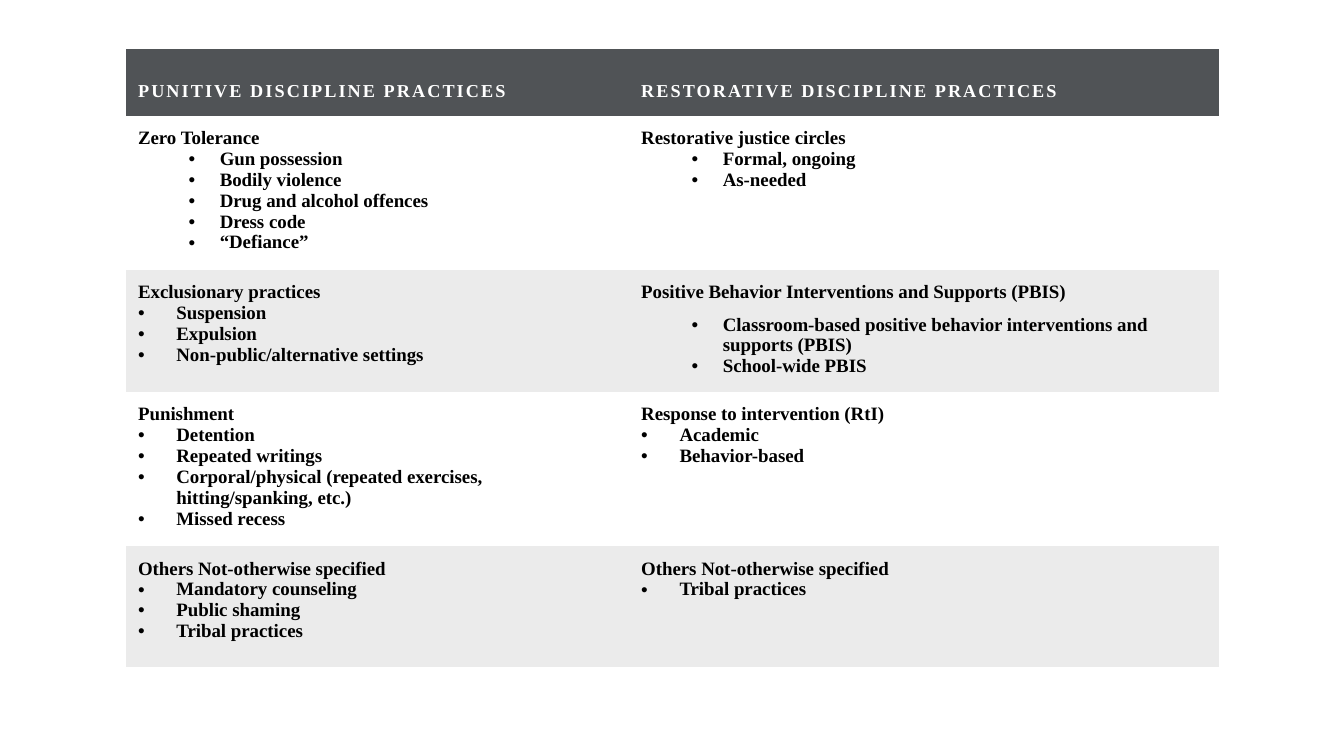
from lxml.etree import SubElement
from pptx import Presentation
from pptx.dml.color import RGBColor
from pptx.oxml.ns import qn
from pptx.util import Inches, Pt

SLIDE_WIDTH, SLIDE_HEIGHT = 13.33, 7.5
FONT = "Times New Roman"
HEADER_FILL, BAND_FILL = "505356", "EBEBEB"
WHITE, BLACK = "FFFFFF", "000000"
NO_GRID_STYLE = "{2D5ABB26-0587-4C30-8999-92F81FD0307C}"
COLUMN_WIDTHS = [4.99, 5.85]
ROW_HEIGHTS = [0.66, 1.53, 1.21, 1.53, 1.2]
CELL_MARGIN = 0.12
SHALLOW, DEEP = (0, 0.38, 0.38), (1, 0.81, 0.31)

HEADINGS = ["PUNITIVE DISCIPLINE PRACTICES", "RESTORATIVE DISCIPLINE PRACTICES"]
PRACTICES = [
    [
        ("Zero Tolerance", DEEP, 0,
         ["Gun possession", "Bodily violence", "Drug and alcohol offences",
          "Dress code", "“Defiance”"]),
        ("Restorative justice circles", DEEP, 0, ["Formal, ongoing", "As-needed"]),
    ],
    [
        ("Exclusionary practices", SHALLOW, 0,
         ["Suspension", "Expulsion", "Non-public/alternative settings"]),
        ("Positive Behavior Interventions and Supports (PBIS)", DEEP, 8,
         ["Classroom-based positive behavior interventions and supports (PBIS)",
          "School-wide PBIS"]),
    ],
    [
        ("Punishment", SHALLOW, 0,
         ["Detention", "Repeated writings",
          "Corporal/physical (repeated exercises, hitting/spanking, etc.)",
          "Missed recess"]),
        ("Response to intervention (RtI)", SHALLOW, 0, ["Academic", "Behavior-based"]),
    ],
    [
        ("Others Not-otherwise specified", SHALLOW, 0,
         ["Mandatory counseling", "Public shaming", "Tribal practices"]),
        ("Others Not-otherwise specified", SHALLOW, 0, ["Tribal practices"]),
    ],
]


def color(hex_code):
    return RGBColor.from_string(hex_code)


def add_text(paragraph, text, size, hex_code):
    run = paragraph.add_run()
    run.text = text
    run.font.name = FONT
    run.font.size = Pt(size)
    run.font.bold = True
    run.font.color.rgb = color(hex_code)
    return run


def add_bullet(paragraph, indent):
    level, left, hanging = indent
    paragraph.level = level
    properties = paragraph._p.get_or_add_pPr()
    properties.set("marL", str(Inches(left)))
    properties.set("indent", str(-Inches(hanging)))
    SubElement(properties, qn("a:buFont"), typeface="Arial")
    SubElement(properties, qn("a:buChar"), char="•")


def format_cell(cell, fill):
    cell.margin_left = cell.margin_right = Inches(CELL_MARGIN)
    cell.margin_top = cell.margin_bottom = Inches(CELL_MARGIN)
    if fill:
        cell.fill.solid()
        cell.fill.fore_color.rgb = color(fill)
    else:
        cell.fill.background()


def write_heading(cell, heading):
    format_cell(cell, HEADER_FILL)
    paragraph = cell.text_frame.paragraphs[0]
    paragraph.line_spacing = 2.0
    run = add_text(paragraph, heading, 13, WHITE)
    run.font._element.set("spc", "150")


def write_practice(cell, practice, fill):
    title, indent, space_after, examples = practice
    format_cell(cell, fill)
    title_line = cell.text_frame.paragraphs[0]
    title_line.space_after = Pt(space_after)
    add_text(title_line, title, 13.5, BLACK)
    for example in examples:
        example_line = cell.text_frame.add_paragraph()
        add_bullet(example_line, indent)
        add_text(example_line, example, 13.5, BLACK)


def add_practice_table(slide):
    frame = slide.shapes.add_table(
        len(ROW_HEIGHTS), len(COLUMN_WIDTHS), Inches(1.25), Inches(0.49),
        Inches(sum(COLUMN_WIDTHS)), Inches(sum(ROW_HEIGHTS)))
    table = frame.table
    table.horz_banding = False
    table._tbl.tblPr.find(qn("a:tableStyleId")).text = NO_GRID_STYLE
    for column, width in zip(table.columns, COLUMN_WIDTHS):
        column.width = Inches(width)
    for row, height in zip(table.rows, ROW_HEIGHTS):
        row.height = Inches(height)
    for column, heading in enumerate(HEADINGS):
        write_heading(table.cell(0, column), heading)
    for row, practices in enumerate(PRACTICES, start=1):
        fill = BAND_FILL if row % 2 == 0 else None
        for column, practice in enumerate(practices):
            write_practice(table.cell(row, column), practice, fill)


def main():
    deck = Presentation()
    deck.slide_width = Inches(SLIDE_WIDTH)
    deck.slide_height = Inches(SLIDE_HEIGHT)
    slide = deck.slides.add_slide(deck.slide_layouts[6])
    add_practice_table(slide)
    deck.save("out.pptx")


if __name__ == "__main__":
    main()
